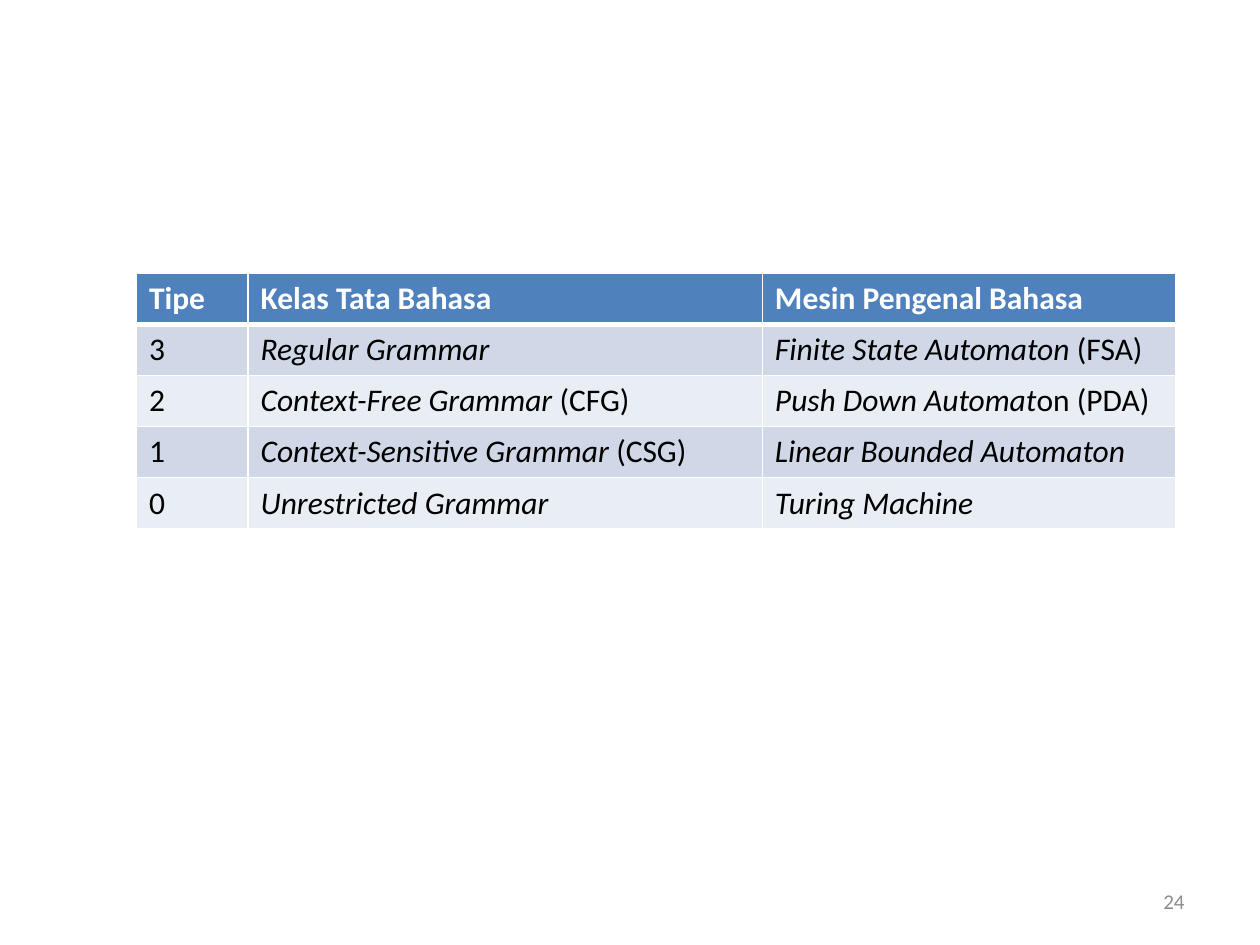
from lxml import etree
from pptx import Presentation
from pptx.dml.color import RGBColor
from pptx.enum import text
from pptx.oxml import ns
from pptx.util import Cm, Pt

HEADER = ["Tipe", "Kelas Tata Bahasa", "Mesin Pengenal Bahasa"]
ROWS = [
    ("3", ("Regular Grammar", ""), ("Finite State Automaton ", "(FSA)")),
    ("2", ("Context-Free Grammar ", "(CFG)"), ("Push Down Automat", "on (PDA)")),
    ("1", ("Context-Sensitive Grammar ", "(CSG)"), ("Linear Bounded Automaton", "")),
    ("0", ("Unrestricted Grammar", ""), ("Turing Machine", "")),
]
COL_WIDTHS = [2.25, 10.37, 8.33]
ROW_HEIGHT = 1.03
HEADER_FILL = "4F81BD"
BAND_FILLS = ["D0D8E8", "E9EDF4"]
WHITE, BLACK, GREY = "FFFFFF", "000000", "8C8C8C"


def rgb(value):
    return RGBColor.from_string(value)


def add_run(p, words, size, color, bold=False, italic=False):
    r = p.add_run()
    r.text = words
    f = r.font
    f.name, f.size, f.bold, f.italic = "Calibri", Pt(size), bold, italic
    f.color.rgb = rgb(color)


def set_borders(cell, widths):
    tc_pr = cell._tc.get_or_add_tcPr()
    for side, width in widths.items():
        ln = etree.SubElement(tc_pr, ns.qn("a:ln" + side), w=str(Pt(width)))
        fill = etree.SubElement(ln, ns.qn("a:solidFill"))
        etree.SubElement(fill, ns.qn("a:srgbClr"), val=WHITE)


def fill_cell(cell, runs, fill, color, bold, top, bottom):
    set_borders(cell, {"L": 1, "R": 1, "T": top, "B": bottom})
    cell.fill.solid()
    cell.fill.fore_color.rgb = rgb(fill)
    p = cell.text_frame.paragraphs[0]
    for words, italic in runs:
        if words:
            add_run(p, words, 18, color, bold, italic)


def add_grammar_table(s):
    count = len(ROWS) + 1
    table = s.shapes.add_table(count, len(HEADER), Cm(2.75), Cm(5.51),
                               Cm(sum(COL_WIDTHS)), Cm(ROW_HEIGHT * count)).table
    for column, width in zip(table.columns, COL_WIDTHS):
        column.width = Cm(width)
    for row in table.rows:
        row.height = Cm(ROW_HEIGHT)
    for c, title in enumerate(HEADER):
        fill_cell(table.cell(0, c), [(title, False)], HEADER_FILL, WHITE, True, 1, 3)
    for r, (level, *names) in enumerate(ROWS, 1):
        cells = [[(level, False)]]
        cells += [[(term, True), (short, False)] for term, short in names]
        for c, runs in enumerate(cells):
            fill_cell(table.cell(r, c), runs, BAND_FILLS[(r - 1) % 2], BLACK,
                      False, 3 if r == 1 else 1, 1)


def add_page_number(s):
    tf = s.shapes.add_textbox(Cm(18.2), Cm(17.66), Cm(5.93), Cm(1.01)).text_frame
    tf.word_wrap = True
    tf.vertical_anchor = text.MSO_ANCHOR.MIDDLE
    p = tf.paragraphs[0]
    p.alignment = text.PP_ALIGN.RIGHT
    add_run(p, "24", 12, GREY)


def main():
    prs = Presentation()
    prs.slide_width, prs.slide_height = Cm(25.4), Cm(19.05)
    s = prs.slides.add_slide(prs.slide_layouts[6])
    add_page_number(s)
    add_grammar_table(s)
    prs.save("out.pptx")


if __name__ == "__main__":
    main()
